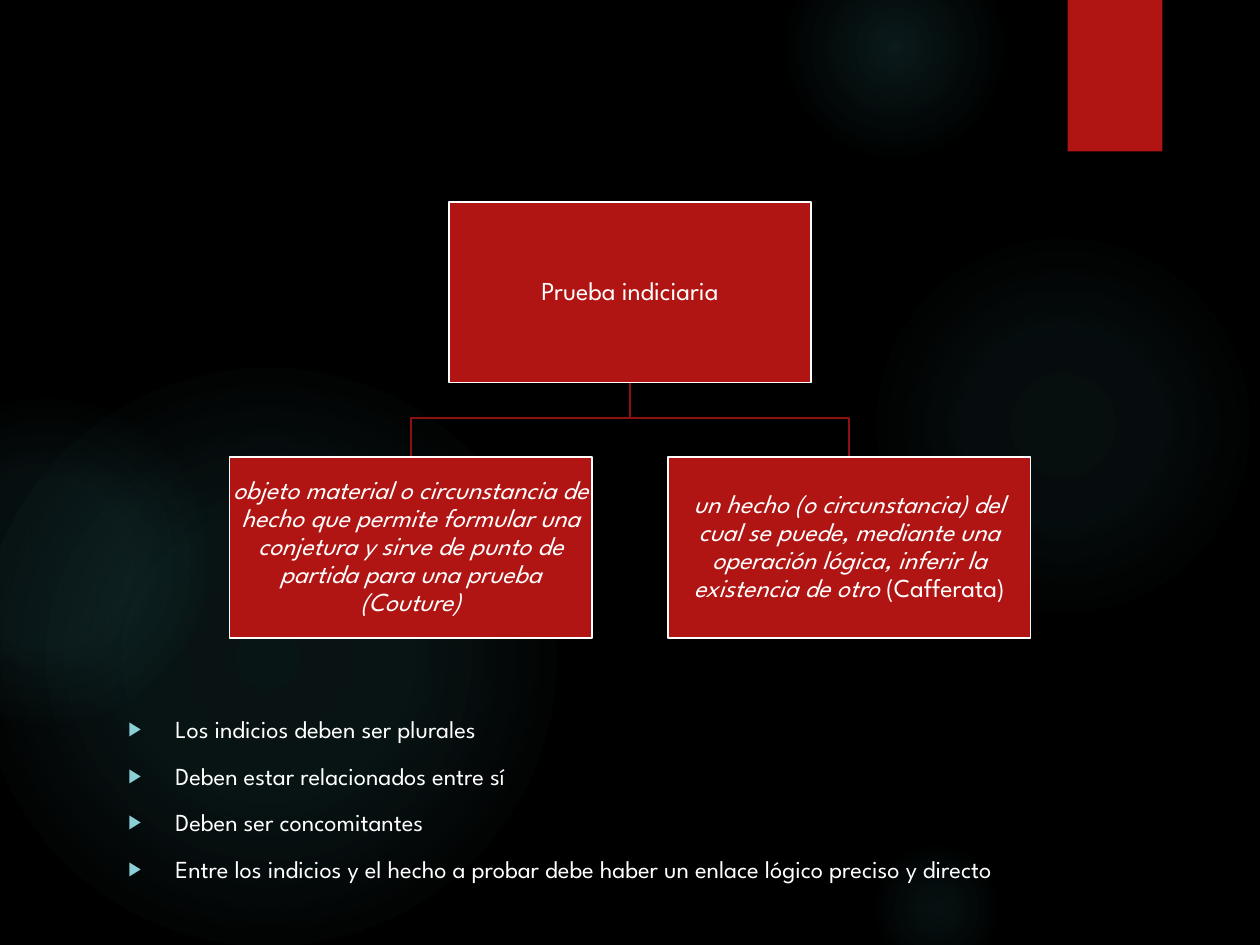
import pptx
import pptx.util
import pptx.dml.color
import pptx.enum.shapes
import pptx.enum.text
import pptx.oxml
import pptx.oxml.ns

Inches = pptx.util.Inches
Pt = pptx.util.Pt
RGBColor = pptx.dml.color.RGBColor
PRESET = pptx.enum.shapes.MSO_SHAPE
ANCHOR = pptx.enum.text.MSO_ANCHOR
ALIGN = pptx.enum.text.PP_ALIGN

# Content: each box is a list of (text, italic) runs
ROOT = [("Prueba indiciaria", False)]
CHILDREN = [
    [("objeto material o circunstancia de hecho que permite formular una "
      "conjetura y sirve de punto de partida para una prueba (Couture)", True)],
    [("un hecho (o circunstancia) del cual se puede, mediante una operación "
      "lógica, inferir la existencia de otro ", True), ("(Cafferata)", False)],
]
REQUIREMENTS = [
    "Los indicios deben ser plurales",
    "Deben estar relacionados entre sí",
    "Deben ser concomitantes",
    "Entre los indicios y el hecho a probar debe haber un enlace lógico preciso y directo",
]
# Glows: left, top, diameter, then (position %, opacity %) stops
GLOWS = [
    (9.8, 2.61, 4.39, [(0, 7), (36, 6), (69, 0)]),
    (8.85, -0.71, 2.49, [(0, 14), (36, 7), (73, 0)]),
    (9.8, 9.48, 1.54, [(0, 9), (36, 5), (66, 0)]),
    (-0.24, 4.15, 6.52, [(0, 11), (36, 10), (75, 0)]),
    (-1.31, 4.5, 3.67, [(0, 8), (36, 8), (72, 0)]),
]

# Format
FONT = "League Spartan"
BLACK = RGBColor(0x00, 0x00, 0x00)
WHITE = RGBColor(0xFF, 0xFF, 0xFF)
RED = RGBColor(0xB0, 0x15, 0x13)
DARK_RED = RGBColor(0x8D, 0x11, 0x0F)
GLOW = RGBColor(0x50, 0xB9, 0xC1)
BULLET = RGBColor(0x8A, 0xD0, 0xD6)
# Side margins keep the italic lines inside the border
BOX_FRAME = {"word_wrap": True, "vertical_anchor": ANCHOR.MIDDLE,
             "margin_left": Inches(0.03), "margin_right": Inches(0.03),
             "margin_top": Inches(0.01), "margin_bottom": Inches(0.01)}
BOX_PARAGRAPH = {"alignment": ALIGN.CENTER, "line_spacing": 0.9}
LIST_FRAME = {"word_wrap": True, "vertical_anchor": ANCHOR.TOP,
              "auto_size": pptx.enum.text.MSO_AUTO_SIZE.NONE}
LIST_PARAGRAPH = {"alignment": ALIGN.LEFT, "line_spacing": 1.0,
                  "space_before": Pt(0), "space_after": Pt(14.2)}

# Tree geometry in inches
SLIDE_WIDTH, SLIDE_HEIGHT = 14.22, 10.67
BOX_WIDTH, BOX_HEIGHT = 4.09, 2.04
CHILD_PITCH = 4.95
ROOT_TOP, BEND, CHILD_TOP = 2.28, 4.72, 5.16
CENTER = SLIDE_WIDTH / 2


def set_all(target, values):
    for name, value in values.items():
        setattr(target, name, value)


def parse(xml):
    return pptx.oxml.parse_xml(xml.replace(">", " " + pptx.oxml.ns.nsdecls("a") + ">", 1))


def add_run(paragraph, text, size, italic=False):
    run = paragraph.add_run()
    run.text = text
    set_all(run.font, {"name": FONT, "size": Pt(size), "italic": italic})
    run.font.color.rgb = WHITE


def add_filled(slide, preset, left, top, width, height, fill=RED):
    shape = slide.shapes.add_shape(
        preset, Inches(left), Inches(top), Inches(width), Inches(height))
    shape.shadow.inherit = False
    shape.line.fill.background()
    shape.fill.solid()
    shape.fill.fore_color.rgb = fill
    return shape


def add_glow(slide, left, top, diameter, stops):
    shape = add_filled(slide, PRESET.OVAL, left, top, diameter, diameter, GLOW)
    stop_xml = "".join(
        f'<a:gs pos="{position * 1000}"><a:srgbClr val="{GLOW}">'
        f'<a:alpha val="{opacity * 1000}"/></a:srgbClr></a:gs>'
        for position, opacity in stops)
    gradient = parse(
        f'<a:gradFill><a:gsLst>{stop_xml}</a:gsLst><a:path path="circle">'
        '<a:fillToRect l="50000" t="50000" r="50000" b="50000"/></a:path></a:gradFill>')
    properties = shape.element.spPr
    properties.replace(properties.find(pptx.oxml.ns.qn("a:solidFill")), gradient)


def add_box(slide, center, top, runs):
    shape = add_filled(slide, PRESET.RECTANGLE, center - BOX_WIDTH / 2, top,
                       BOX_WIDTH, BOX_HEIGHT)
    shape.line.color.rgb = WHITE
    shape.line.width = Pt(1.5)
    set_all(shape.text_frame, BOX_FRAME)
    paragraph = shape.text_frame.paragraphs[0]
    set_all(paragraph, BOX_PARAGRAPH)
    for text, italic in runs:
        add_run(paragraph, text, 21, italic)


def add_branch(slide, child_center):
    points = [(CENTER, ROOT_TOP + BOX_HEIGHT), (CENTER, BEND),
              (child_center, BEND), (child_center, CHILD_TOP)]
    start, *rest = [(Inches(x), Inches(y)) for x, y in points]
    builder = slide.shapes.build_freeform(*start)
    builder.add_line_segments(rest, close=False)
    branch = builder.convert_to_shape()
    branch.shadow.inherit = False
    branch.fill.background()
    branch.line.color.rgb = DARK_RED
    branch.line.width = Pt(1.5)


def fill_list(body):
    set_all(body, {"left": Inches(1.35), "top": Inches(8.01),
                   "width": Inches(12.24), "height": Inches(1.87)})
    frame = body.text_frame
    set_all(frame, LIST_FRAME)
    for index, text in enumerate(REQUIREMENTS):
        paragraph = frame.add_paragraph() if index else frame.paragraphs[0]
        set_all(paragraph, LIST_PARAGRAPH)
        add_run(paragraph, text, 19.9)
        properties = paragraph._p.get_or_add_pPr()
        properties.set("marL", str(Inches(0.53)))
        properties.set("indent", str(-Inches(0.53)))
        for xml in (f'<a:buClr><a:srgbClr val="{BULLET}"/></a:buClr>',
                    '<a:buSzPct val="80000"></a:buSzPct>',
                    '<a:buFont typeface="Arial"></a:buFont>',
                    '<a:buChar char="▶"></a:buChar>'):
            properties.append(parse(xml))


def main():
    presentation = pptx.Presentation()
    presentation.slide_width = Inches(SLIDE_WIDTH)
    presentation.slide_height = Inches(SLIDE_HEIGHT)
    slide = presentation.slides.add_slide(presentation.slide_layouts[1])
    slide.background.fill.solid()
    slide.background.fill.fore_color.rgb = BLACK

    # The slide has no title
    title = slide.shapes.title.element
    title.getparent().remove(title)

    # Backdrop
    for glow in GLOWS:
        add_glow(slide, *glow)
    add_filled(slide, PRESET.RECTANGLE, 12.05, 0, 1.07, 1.71)

    # List, brought in front of the backdrop
    body = slide.placeholders[1]
    fill_list(body)
    body.element.getparent().append(body.element)

    # Tree: branches first, boxes over their ends
    centers = [CENTER + (index - (len(CHILDREN) - 1) / 2) * CHILD_PITCH
               for index in range(len(CHILDREN))]
    for center in centers:
        add_branch(slide, center)
    add_box(slide, CENTER, ROOT_TOP, ROOT)
    for center, runs in zip(centers, CHILDREN):
        add_box(slide, center, CHILD_TOP, runs)

    presentation.save("out.pptx")


if __name__ == "__main__":
    main()
